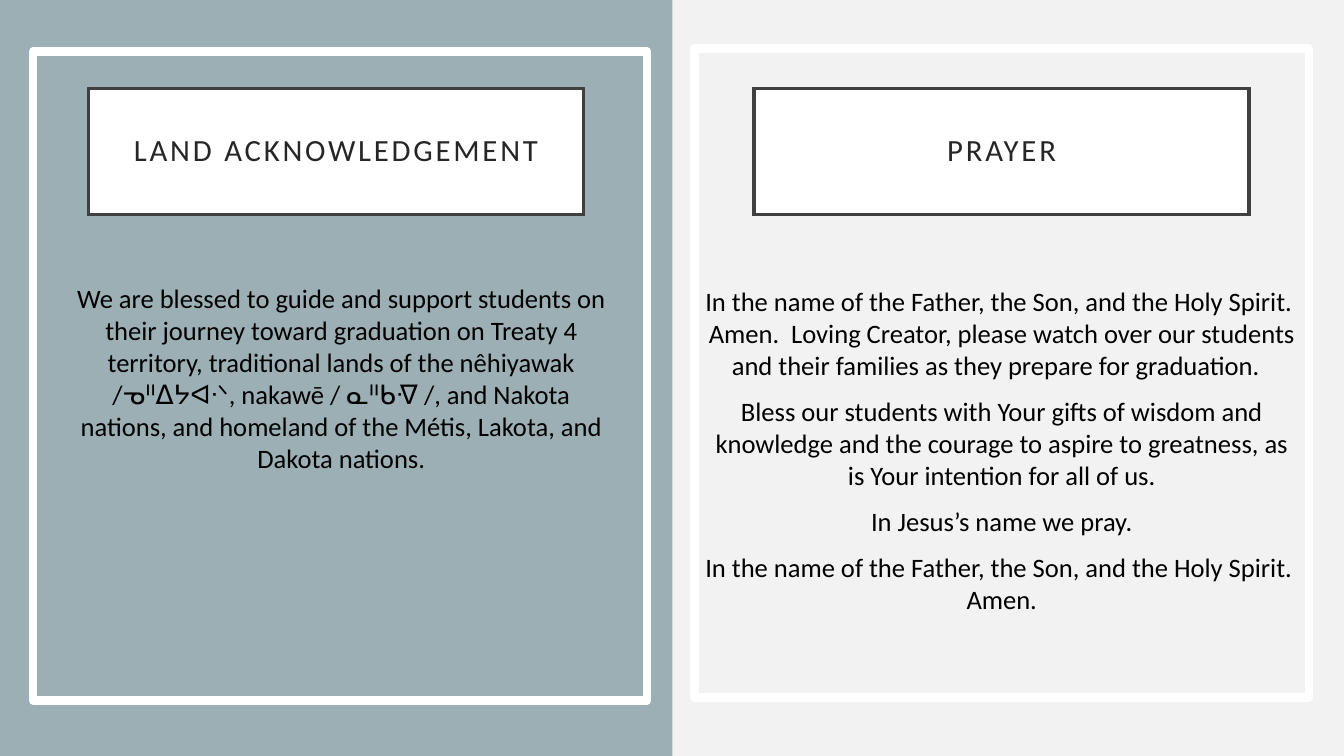
from lxml.etree import SubElement
from pptx import Presentation
from pptx.dml.color import RGBColor
from pptx.enum.shapes import MSO_SHAPE
from pptx.enum.text import MSO_ANCHOR, PP_ALIGN
from pptx.oxml.ns import qn
from pptx.util import Pt

PX = 9144
SLIDE_WIDTH, SLIDE_HEIGHT = 1333, 750
FRAME_WIDTH, FRAME_HEIGHT = 609, 644
TITLE_WIDTH, TITLE_HEIGHT = 491, 125
FONT = "Calibri"

SLATE = RGBColor(0x9B, 0xAF, 0xB5)
PALE = RGBColor(0xF2, 0xF2, 0xF2)
WHITE = RGBColor(0xFF, 0xFF, 0xFF)
BORDER = RGBColor(0x40, 0x40, 0x40)
TITLE_INK = RGBColor(0x26, 0x26, 0x26)
BLACK = RGBColor(0, 0, 0)

LAND = [
    "We are blessed to guide and support students on their journey toward "
    "graduation on Treaty 4 territory, traditional lands of the nêhiyawak "
    "/ᓀᐦᐃᔭᐊᐧᐠ, nakawē / ᓇᐦᑲᐌ /, and Nakota nations, and homeland of the "
    "Métis, Lakota, and Dakota nations.",
]
BLESSING = "In the name of the Father, the Son, and the Holy Spirit.  Amen."
PRAYER = [
    BLESSING + "  Loving Creator, please watch over our students and their "
    "families as they prepare for graduation.  ",
    "Bless our students with Your gifts of wisdom and knowledge and the courage "
    "to aspire to greatness, as is Your intention for all of us.",
    "In Jesus’s name we pray.",
    BLESSING,
]


def px(*lengths):
    """Turn px lengths into EMU."""
    return [length * PX for length in lengths]


def add_rectangle(page, box, fill=None, line=None, weight=0):
    """Add a flat rectangle with an optional fill and outline."""
    shape = page.shapes.add_shape(MSO_SHAPE.RECTANGLE, *px(*box))
    shape.shadow.inherit = False
    if fill is None:
        shape.fill.background()
    else:
        shape.fill.solid()
        shape.fill.fore_color.rgb = fill
    if line is None:
        shape.line.fill.background()
    else:
        shape.line.color.rgb = line
        shape.line.width = Pt(weight)
    return shape


def style_paragraph(para, size, color):
    """Centre a paragraph and set its font."""
    para.alignment = PP_ALIGN.CENTER
    para.font.name = FONT
    para.font.size = Pt(size)
    para.font.color.rgb = color


def add_title(page, box, text):
    """Add a bordered title with letter-spaced capitals."""
    shape = add_rectangle(page, box, WHITE, BORDER, 2.5)
    SubElement(shape.line._get_or_add_ln(), qn("a:miter"), lim="800000")
    frame = shape.text_frame
    frame.word_wrap = True
    frame.vertical_anchor = MSO_ANCHOR.MIDDLE
    (frame.margin_left, frame.margin_top,
     frame.margin_right, frame.margin_bottom) = px(20, 20, 20, 20)
    para = frame.paragraphs[0]
    para.line_spacing = 0.9
    style_paragraph(para, 22, TITLE_INK)
    span = para.add_run()
    span.text = text
    span.font._element.set("spc", "200")


def add_body(page, box, texts):
    """Add centred body paragraphs from the top of the box."""
    frame = page.shapes.add_textbox(*px(*box)).text_frame
    frame.word_wrap = True
    for index, text in enumerate(texts):
        para = frame.add_paragraph() if index else frame.paragraphs[0]
        para.text = text
        para.space_before = Pt(10)
        style_paragraph(para, 19, BLACK)


def add_panel(page, box, title, texts, title_offset, body_box):
    """Add a white frame with a title and body placed from its corner."""
    left, top, width, height = box
    add_rectangle(page, box, line=WHITE, weight=6)
    across, down = title_offset
    add_title(page, (left + across, top + down, TITLE_WIDTH, TITLE_HEIGHT), title)
    across, down, body_width, body_height = body_box
    add_body(page, (left + across, top + down, body_width, body_height), texts)


def main():
    """Build the slide and save the deck."""
    deck = Presentation()
    deck.slide_width, deck.slide_height = px(SLIDE_WIDTH, SLIDE_HEIGHT)
    page = deck.slides.add_slide(deck.slide_layouts[6])
    page.background.fill.solid()
    page.background.fill.fore_color.rgb = PALE
    add_rectangle(page, (0, 0, 667, SLIDE_HEIGHT), SLATE)
    add_panel(page, (33, 51, FRAME_WIDTH, FRAME_HEIGHT), "LAND ACKNOWLEDGEMENT",
              LAND, (55, 37), (24, 224, 563, 196))
    add_panel(page, (689, 48, FRAME_WIDTH, FRAME_HEIGHT), "PRAYER",
              PRAYER, (59, 40), (0, 230, FRAME_WIDTH, 414))
    deck.save("out.pptx")


if __name__ == "__main__":
    main()
